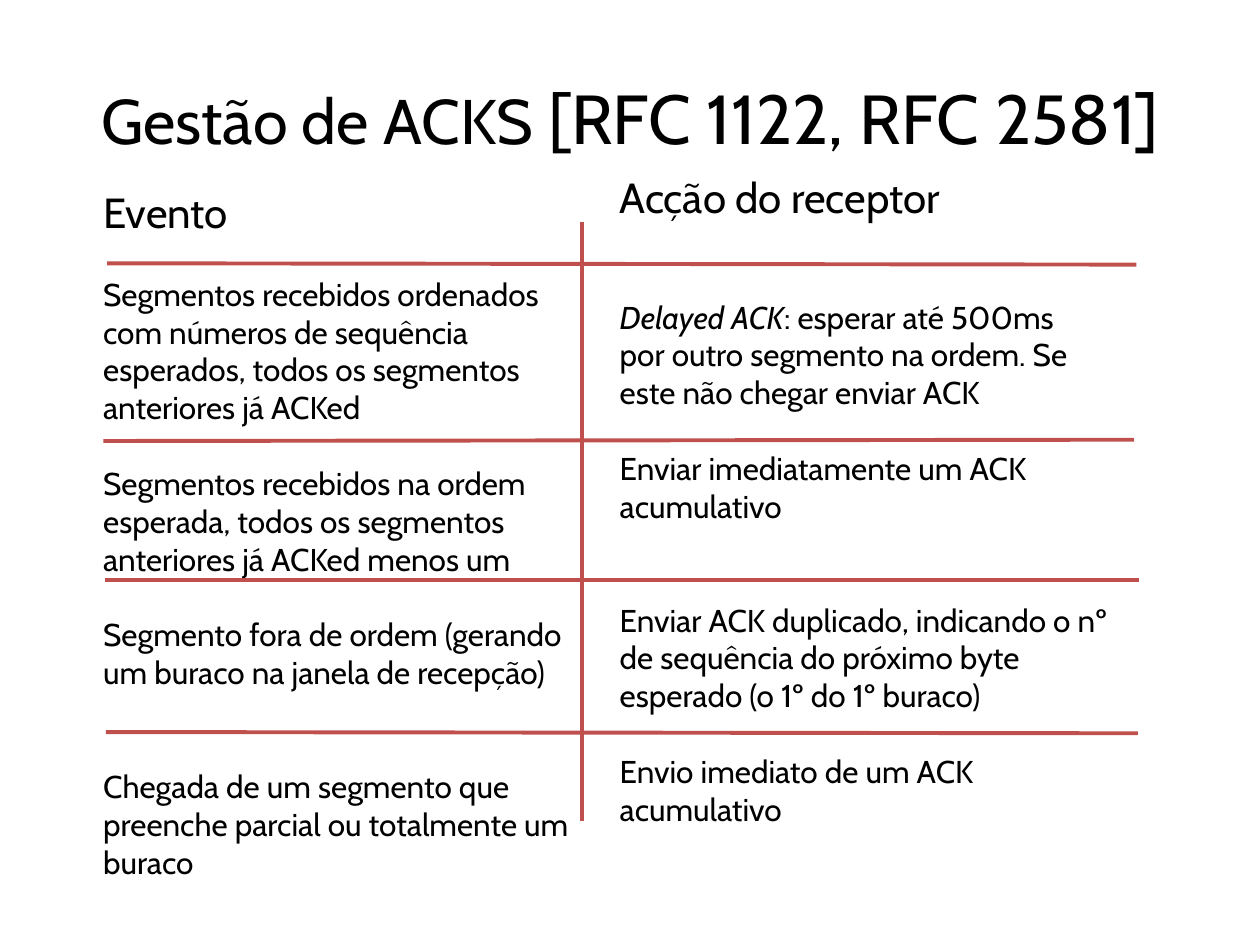
from lxml import etree
from pptx import Presentation
from pptx.dml.color import RGBColor
from pptx.enum import shapes, text
from pptx.oxml import ns
from pptx.util import Inches, Pt

FONT = "Cabin"
BLACK = RGBColor(0x00, 0x00, 0x00)
RED = RGBColor(0xC0, 0x50, 0x4D)
HEADING_SIZE, BODY_SIZE = 24, 18
LINE_PITCH = 21.7

TITLE = [("Gestão de ACKS", 36), (" [RFC 1122, RFC 2581]", 39.6)]

# Each entry: lines of space above, italic lead, text
EVENTS = [
    (0, "", "Evento"),
    (1, "", "Segmentos recebidos ordenados com números de sequência esperados, "
            "todos os segmentos anteriores já ACKed"),
    (1, "", "Segmentos recebidos na ordem esperada, todos os segmentos"),
    (0, "", "anteriores já ACKed menos um"),
    (1, "", "Segmento fora de ordem (gerando um buraco na janela de recepção)"),
    (2, "", "Chegada de um segmento que preenche parcial ou totalmente um buraco"),
]
ACTIONS = [
    (0, "", "Acção do receptor"),
    (2, "Delayed ACK", ": esperar até 500ms"),
    (0, "", "por outro segmento na ordem. Se este não chegar enviar ACK"),
    (1, "", "Enviar imediatamente um ACK acumulativo"),
    (2, "", "Enviar ACK duplicado, indicando o nº de sequência do próximo byte "
            "esperado (o 1º do 1º buraco)"),
    (1, "", "Envio imediato de um ACK acumulativo"),
]
COLUMNS = [
    (EVENTS, (0.72, 1.43, 3.95, 5.82)),
    (ACTIONS, (4.82, 1.31, 4.22, 5.22)),
]
RULES = [
    (0.85, 2.09, 9.02, 2.1),
    (0.82, 3.5, 9, 3.49),
    (0.83, 4.6, 9.04, 4.6),
    (0.84, 5.81, 9.03, 5.82),
    (4.62, 1.76, 4.62, 6.52),
]


def add_run(paragraph, wording, size, italic=False):
    run = paragraph.add_run()
    run.text = wording
    run.font.name = FONT
    run.font.size = Pt(size)
    run.font.italic = italic
    run.font.color.rgb = BLACK


def add_column(slide, entries, box):
    column = slide.shapes.add_textbox(*map(Inches, box)).text_frame
    column.word_wrap = True
    column.auto_size = text.MSO_AUTO_SIZE.SHAPE_TO_FIT_TEXT
    for index, (gap, lead, wording) in enumerate(entries):
        paragraph = column.add_paragraph() if index else column.paragraphs[0]
        paragraph.space_before = Pt(gap * LINE_PITCH)
        size = BODY_SIZE if index else HEADING_SIZE
        if lead:
            add_run(paragraph, lead, size, italic=True)
        add_run(paragraph, wording, size)


def add_rule(slide, ends):
    rule = slide.shapes.add_connector(
        shapes.MSO_CONNECTOR.STRAIGHT, *map(Inches, ends))
    rule.line.color.rgb = RED
    rule.line.width = Pt(2.25)
    properties = rule._element.find(ns.qn("p:spPr"))
    etree.SubElement(properties, ns.qn("a:effectLst"))


def main():
    deck = Presentation()
    deck.slide_width, deck.slide_height = Inches(10), Inches(7.5)
    slide = deck.slides.add_slide(deck.slide_layouts[5])

    title = slide.shapes.title
    title.left, title.top = Inches(0.5), Inches(0.3)
    title.width, title.height = Inches(9), Inches(1.25)
    title.text_frame.vertical_anchor = text.MSO_ANCHOR.MIDDLE
    heading = title.text_frame.paragraphs[0]
    heading.alignment = text.PP_ALIGN.CENTER
    for wording, size in TITLE:
        add_run(heading, wording, size)

    for entries, box in COLUMNS:
        add_column(slide, entries, box)
    for ends in RULES:
        add_rule(slide, ends)

    deck.save("out.pptx")


if __name__ == "__main__":
    main()
